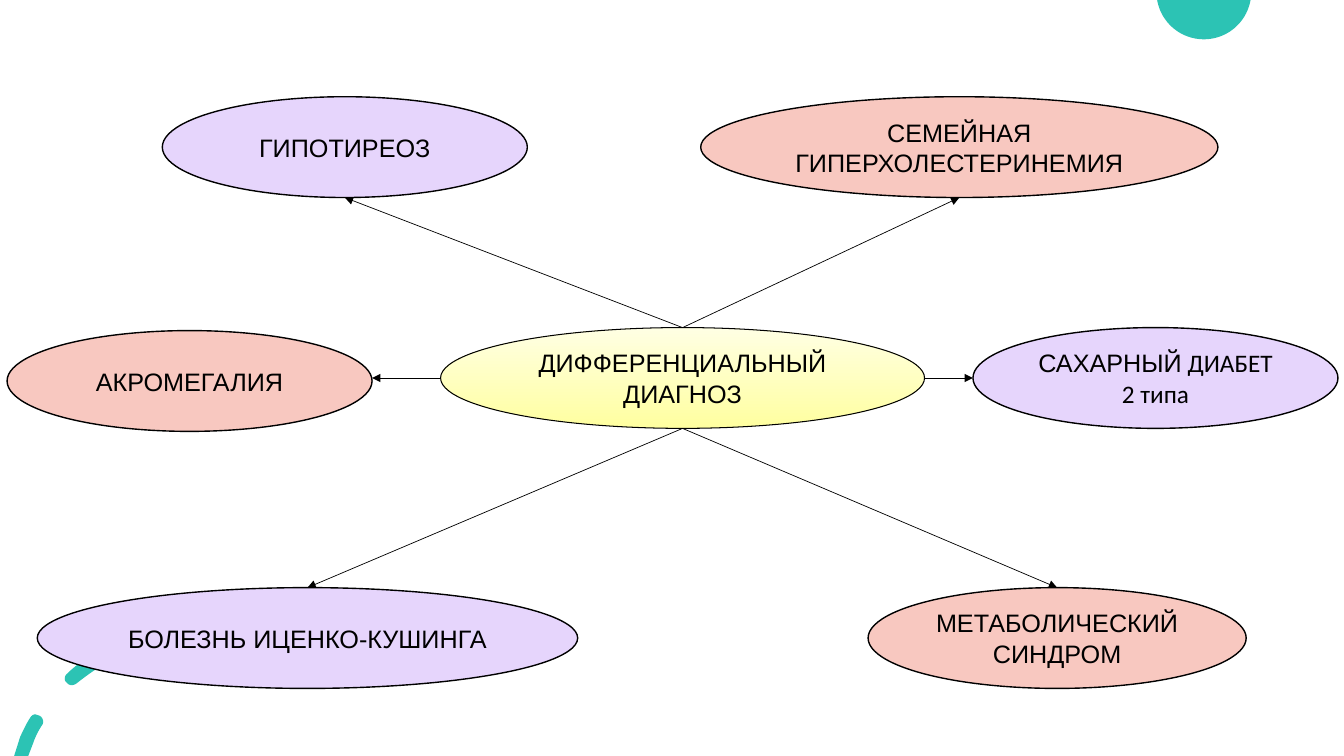
import math

from lxml import etree
from pptx import Presentation
from pptx.dml.color import RGBColor
from pptx.enum.shapes import MSO_CONNECTOR, MSO_SHAPE
from pptx.enum.text import MSO_ANCHOR, PP_ALIGN
from pptx.oxml.ns import qn
from pptx.util import Inches, Pt

ELLIPSE = MSO_SHAPE.OVAL
STRAIGHT = MSO_CONNECTOR.STRAIGHT
MIDDLE = MSO_ANCHOR.MIDDLE
CENTER = PP_ALIGN.CENTER

BLACK, TEAL, PINK, LILAC = "000000", "2CC3B4", "F8C8C0", "E6D5FC"
HUB_GRADIENT = ("FFFFA0", "FFFFE3")
HUB_BOX = (4.37, 3.25, 4.8, 1)
HUB_TEXT = [[("ДИФФЕРЕНЦИАЛЬНЫЙ", "Arial")], [("ДИАГНОЗ", "Arial")]]

# box, fill, runs of the label, side of the hub that the arrow leaves from
DIAGNOSES = [
    ((1.61, 0.96, 3.62, 1), LILAC, [("ГИПОТИРЕОЗ", "Arial")], "top"),
    ((6.95, 0.96, 5.13, 1), PINK, [("СЕМЕЙНАЯ ГИПЕРХОЛЕСТЕРИНЕМИЯ", "Arial")], "top"),
    ((0.07, 3.28, 3.62, 1), PINK, [("АКРОМЕГАЛИЯ", "Arial")], "left"),
    ((9.65, 3.25, 3.62, 1), LILAC,
     [("САХАРНЫЙ", "Arial"), (" ДИАБЕТ 2 типа", "Calibri")], "right"),
    ((0.37, 5.83, 5.36, 1), LILAC, [("БОЛЕЗНЬ ИЦЕНКО-КУШИНГА", "Arial")], "bottom"),
    ((8.61, 5.83, 3.75, 1), PINK, [("МЕТАБОЛИЧЕСКИЙ СИНДРОМ", "Arial")], "bottom"),
]
OPPOSITE = {"top": "bottom", "bottom": "top", "left": "right", "right": "left"}

# Outlines of the dashes: a start point, then Bezier curves or straight sides
DASHES = [
    [[(0.36, 7.09)], [(0.34, 7.08), (0.31, 7.1), (0.3, 7.12)],
     [(0.26, 7.18), (0.23, 7.25), (0.2, 7.31)], [(0.14, 7.5)], [(0.28, 7.5)],
     [(0.33, 7.37)], [(0.35, 7.31), (0.38, 7.25), (0.42, 7.19)],
     [(0.44, 7.16), (0.42, 7.11), (0.39, 7.1)]],
    [[(1.05, 6.43)], [(0.9, 6.5), (0.77, 6.58), (0.67, 6.68)],
     [(0.64, 6.7), (0.63, 6.75), (0.66, 6.77)],
     [(0.69, 6.81), (0.73, 6.8), (0.76, 6.78)],
     [(0.86, 6.7), (0.97, 6.62), (1.09, 6.56)],
     [(1.14, 6.53), (1.13, 6.43), (1.05, 6.43)]],
]


def color(hex_code):
    return RGBColor.from_string(hex_code)


def bezier(start, curve, steps=8):
    """Sample a cubic Bezier curve, leaving out its start point."""
    points = [start, *curve]
    samples = []
    for step in range(1, steps + 1):
        t = step / steps
        weights = [math.comb(3, i) * t**i * (1 - t) ** (3 - i) for i in range(4)]
        samples.append(tuple(sum(w * p[axis] for w, p in zip(weights, points))
                             for axis in (0, 1)))
    return samples


def trace(segments):
    """Turn a start point, sides and curves into a list of points."""
    points = list(segments[0])
    for segment in segments[1:]:
        points += bezier(points[-1], segment) if len(segment) == 3 else segment
    return points


def add_outline(slide, points):
    corners = [(Inches(x), Inches(y)) for x, y in points]
    builder = slide.shapes.build_freeform(*corners[0])
    builder.add_line_segments(corners[1:], close=True)
    outline = builder.convert_to_shape()
    outline.shadow.inherit = False
    outline.fill.solid()
    outline.fill.fore_color.rgb = color(TEAL)
    outline.line.fill.background()


def add_decoration(slide):
    """Draw the disc cut by the top edge and the dashed arc at bottom left."""
    center_x, center_y, radius = 11.94, -0.08, 0.47
    first = math.asin(-center_y / radius)
    sweep = math.pi - 2 * first
    angles = [first + sweep * step / 48 for step in range(49)]
    add_outline(slide, [(center_x + radius * math.cos(a),
                         max(0, center_y + radius * math.sin(a))) for a in angles])
    for dash in DASHES:
        add_outline(slide, trace(dash))


def add_ellipse(slide, box, paragraphs, line_width):
    ellipse = slide.shapes.add_shape(ELLIPSE, *map(Inches, box))
    ellipse.shadow.inherit = False
    ellipse.line.color.rgb = color(BLACK)
    ellipse.line.width = Pt(line_width)
    frame = ellipse.text_frame
    for name, value in {"word_wrap": True, "vertical_anchor": MIDDLE}.items():
        setattr(frame, name, value)
    for index, runs in enumerate(paragraphs):
        paragraph = frame.add_paragraph() if index else frame.paragraphs[0]
        paragraph.alignment = CENTER
        for text, font_name in runs:
            run = paragraph.add_run()
            run.text = text
            for name, value in {"name": font_name, "size": Pt(18)}.items():
                setattr(run.font, name, value)
            run.font.color.rgb = color(BLACK)
    return ellipse


def add_hub(slide, box):
    hub = add_ellipse(slide, box, HUB_TEXT, 0.75)
    hub.fill.gradient()
    hub.fill.gradient_angle = 90
    for stop, shade, position in zip(hub.fill.gradient_stops, HUB_GRADIENT, (0, 1)):
        stop.color.rgb = color(shade)
        stop.position = position


def side_point(box, side):
    left, top, width, height = box
    return {
        "top": (left + width / 2, top),
        "bottom": (left + width / 2, top + height),
        "left": (left, top + height / 2),
        "right": (left + width, top + height / 2),
    }[side]


def add_arrow(slide, hub_box, box, side):
    start = side_point(hub_box, side)
    end = side_point(box, OPPOSITE[side])
    if side in ("left", "right"):
        end = (end[0], start[1])
    arrow = slide.shapes.add_connector(STRAIGHT, *map(Inches, start + end))
    arrow.line.color.rgb = color(BLACK)
    arrow.line.width = Pt(0.5)
    etree.SubElement(arrow.line._get_or_add_ln(), qn("a:tailEnd"), type="triangle")
    etree.SubElement(arrow._element.spPr, qn("a:effectLst"))


def add_diagnosis_map(slide, hub_box):
    add_hub(slide, hub_box)
    for box, fill, label, side in DIAGNOSES:
        add_arrow(slide, hub_box, box, side)
        diagnosis = add_ellipse(slide, box, [label], 1)
        diagnosis.fill.solid()
        diagnosis.fill.fore_color.rgb = color(fill)


def main():
    presentation = Presentation()
    presentation.slide_width = Inches(13.33)
    presentation.slide_height = Inches(7.5)
    slide = presentation.slides.add_slide(presentation.slide_layouts[6])
    add_decoration(slide)
    add_diagnosis_map(slide, HUB_BOX)
    presentation.save("out.pptx")


if __name__ == "__main__":
    main()
